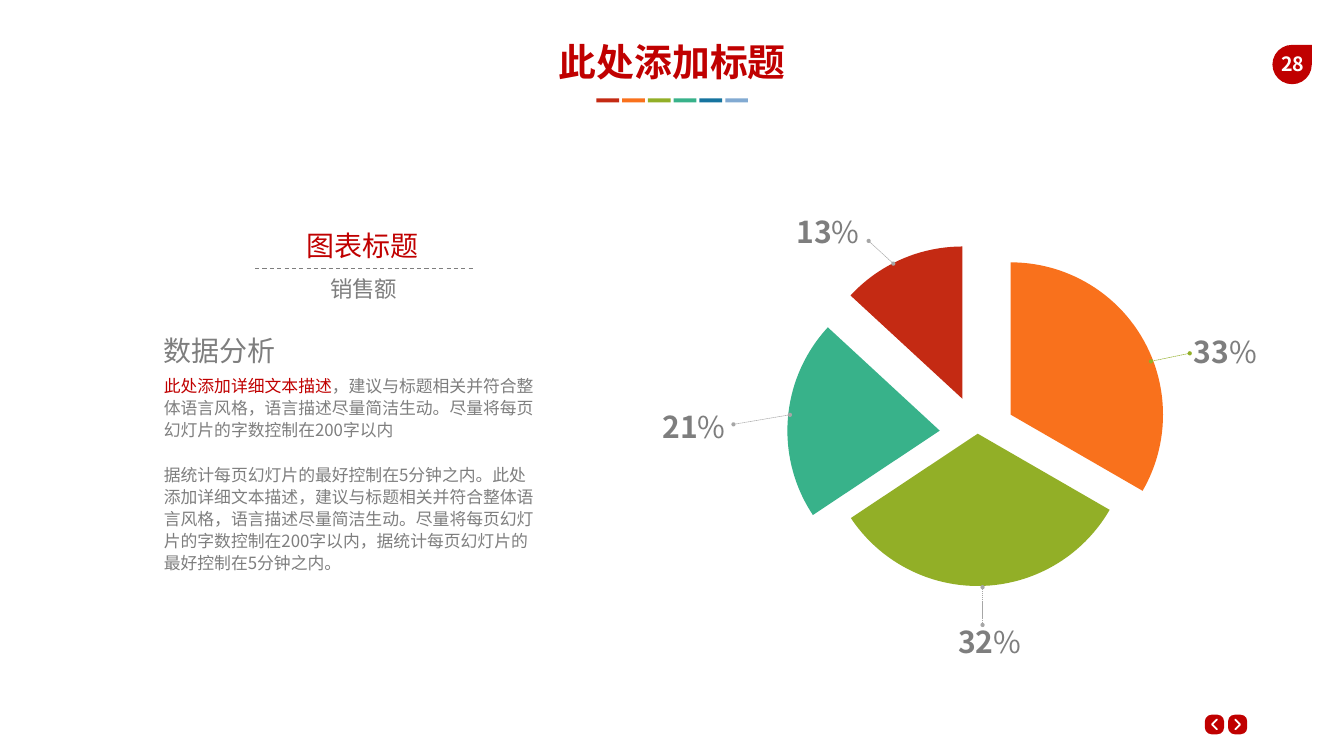
from lxml import etree
from pptx import Presentation
from pptx.chart.data import CategoryChartData
from pptx.dml.color import RGBColor
from pptx.enum import chart as ch, dml, shapes, text
from pptx.oxml import ns
from pptx.util import Pt

FONT = "Noto Sans CJK SC"
COLORS = {
    "accent": "C00000", "grey": "7E7E7E", "leader": "A6A6A6", "white": "FFFFFF",
    "red": "C42A13", "orange": "F9711C", "green": "92AF27",
    "teal": "38B28A", "blue": "16749F", "sky": "82AAD2",
}
BARS = ["red", "orange", "green", "teal", "blue", "sky"]

# value, colour, explosion, label left/top, leader start, leader end, leader colour
SLICES = [
    (33, "orange", 25, (1673.3, 463), (1699.2, 504.7), (1643.8, 516.2), "green"),
    (32, "green", 0, (1337, 877.7), (1403.3, 892.8), (1403.3, 838.8), "leader"),
    (21, "teal", 25, (914.4, 570.2), (1128.2, 592.6), (1047.6, 606.2), "leader"),
    (13, "red", 25, (1105.9, 291.6), (1275.8, 376.6), (1240.6, 344.2), "leader"),
]
LABEL_SIZE = (121.7, 73.4)
CHART_BOX = (973.4, 337.7, 846, 563.8)

# paragraphs are lists of runs: (text, colour, bold)
BODY = [
    [("此处添加详细文本描述", "accent", False),
     ("，建议与标题相关并符合整体语言风格，语言描述尽量简洁生动。"
      "尽量将每页幻灯片的字数控制在200字以内", "grey", False)],
    [("据统计每页幻灯片的最好控制在5分钟之内。此处添加详细文本描述，"
      "建议与标题相关并符合整体语言风格，语言描述尽量简洁生动。"
      "尽量将每页幻灯片的字数控制在200字以内，"
      "据统计每页幻灯片的最好控制在5分钟之内。", "grey", False)],
]
# paragraphs, box, format
TEXTS = [
    ([[("此处添加标题", "accent", True)]], (607, 46.8, 706.3, 72.7),
     dict(size=54, align="CENTER", inset=(7.2, 3.6))),
    ([[("图表标题", "accent", False)]], (219.6, 315.4, 596.9, 63.4),
     dict(size=40, align="CENTER")),
    ([[("销售额", "grey", False)]], (229, 383.8, 581, 53.3),
     dict(size=32, align="CENTER")),
    ([[("数据分析", "grey", False)]], (219.6, 465.8, 596.9, 63.4), dict(size=40)),
    (BODY, (219.6, 526.3, 558.7, 302.4), dict(size=24, spacing=1.32, gap=31.7)),
]


def rgb(name):
    return RGBColor.from_string(COLORS[name])


def pts(*values):
    return [Pt(v) for v in values]


def add_text(slide, paragraphs, box, size=24, align="LEFT", anchor="TOP",
             inset=(14.4, 7.2), spacing=1.28, gap=0):
    tf = slide.shapes.add_textbox(*pts(*box)).text_frame
    tf.word_wrap = True
    tf.vertical_anchor = getattr(text.MSO_ANCHOR, anchor)
    tf.margin_left = tf.margin_right = Pt(inset[0])
    tf.margin_top = tf.margin_bottom = Pt(inset[1])
    for i, runs in enumerate(paragraphs):
        p = tf.add_paragraph() if i else tf.paragraphs[0]
        p.alignment = getattr(text.PP_ALIGN, align)
        p.line_spacing = Pt(round(size * spacing, 2))
        if i:
            p.space_before = Pt(gap)
        for words, color, bold in runs:
            r = p.add_run()
            r.text = words
            r.font.size, r.font.bold, r.font.name = Pt(size), bold, FONT
            r.font.color.rgb = rgb(color)
            ea = etree.SubElement(r.font._element, ns.qn("a:ea"))
            ea.set("typeface", FONT)


def add_block(slide, kind, box, color):
    sp = slide.shapes.add_shape(getattr(shapes.MSO_SHAPE, kind), *pts(*box))
    sp.shadow.inherit = False
    sp.fill.solid()
    sp.fill.fore_color.rgb = rgb(color)
    sp.line.fill.background()
    return sp


def add_line(slide, start, end, color, width, dash, dots=False):
    c = slide.shapes.add_connector(shapes.MSO_CONNECTOR.STRAIGHT, *pts(*start, *end))
    c.line.color.rgb, c.line.width, c.line.dash_style = rgb(color), Pt(width), dash
    if dots:
        for tag in ("a:headEnd", "a:tailEnd"):
            etree.SubElement(c.line._get_or_add_ln(), ns.qn(tag)).set("type", "oval")
    etree.SubElement(c._element.spPr, ns.qn("a:effectLst"))


def add_nav_button(slide, left, direction):
    """Red button with a chevron; direction is -1 for back and 1 for forward."""
    top, width, height = 1021, 27.4, 28
    button = add_block(slide, "ROUNDED_RECTANGLE", (left, top, width, height), "accent")
    button.adjustments[0] = 0.35
    x, y = left + width / 2, top + height / 2
    back, tip = x - 3.5 * direction, x + 3.5 * direction
    fb = slide.shapes.build_freeform(Pt(back), Pt(y - 7))
    fb.add_line_segments([pts(tip, y), pts(back, y + 7)], close=False)
    sp = fb.convert_to_shape()
    sp.shadow.inherit = False
    sp.fill.background()
    sp.line.color.rgb, sp.line.width = rgb("white"), Pt(2.5)
    ln = sp.line._get_or_add_ln()
    ln.set("cap", "rnd")
    etree.SubElement(ln, ns.qn("a:round"))


def explosion(value):
    el = etree.Element(ns.qn("c:explosion"))
    el.set("val", str(value))
    return el


def add_pie(slide):
    data = CategoryChartData()
    data.categories = [str(i + 1) for i in range(len(SLICES))]
    data.add_series("Series 1", [s[0] for s in SLICES])
    chart = slide.shapes.add_chart(ch.XL_CHART_TYPE.PIE, *pts(*CHART_BOX), data).chart
    chart.has_legend = chart.has_title = False
    chart.font.size, chart.font.name = Pt(18), FONT
    chart.font.color.rgb = rgb("grey")
    series = chart.plots[0].series[0]
    for i, (_, color, offset, *_) in enumerate(SLICES):
        fmt = series.points[i].format
        fmt.fill.solid()
        fmt.fill.fore_color.rgb = rgb(color)
        fmt.line.fill.background()
    ser = series._element
    ser.find(ns.qn("c:tx")).addnext(explosion(25))
    for dpt, s in zip(ser.findall(ns.qn("c:dPt")), SLICES):
        dpt.find(ns.qn("c:spPr")).addprevious(explosion(s[2]))


def main():
    prs = Presentation()
    prs.slide_width, prs.slide_height = pts(1919.52, 1080)
    slide = prs.slides.add_slide(prs.slide_layouts[6])

    for i, direction in enumerate((-1, 1)):
        add_nav_button(slide, 1720.8 + 33.1 * i, direction)
    add_block(slide, "TEAR", (1817.3, 64.1, 56.2, 56.2), "accent")
    add_text(slide, [[("28", "white", True)]], (1811.5, 64.8, 69.8, 48.2),
             size=28, align="CENTER")

    add_pie(slide)
    for value, _, _, place, start, end, color in SLICES:
        add_line(slide, start, end, color, 0.75, dml.MSO_LINE.SQUARE_DOT, dots=True)
        add_text(slide, [[(str(value), "grey", True), ("%", "grey", False)]],
                 place + LABEL_SIZE, size=43, align="RIGHT", anchor="MIDDLE", inset=(0, 0))

    for i, color in enumerate(BARS):
        add_block(slide, "RECTANGLE", (851.8 + 36.8 * i, 140.4, 32.4, 5.8), color)
    for paragraphs, box, fmt in TEXTS:
        add_text(slide, paragraphs, box, **fmt)
    add_line(slide, (364.3, 383), (676.1, 383), "grey", 1.5, dml.MSO_LINE.DASH)

    prs.save("out.pptx")


if __name__ == "__main__":
    main()
